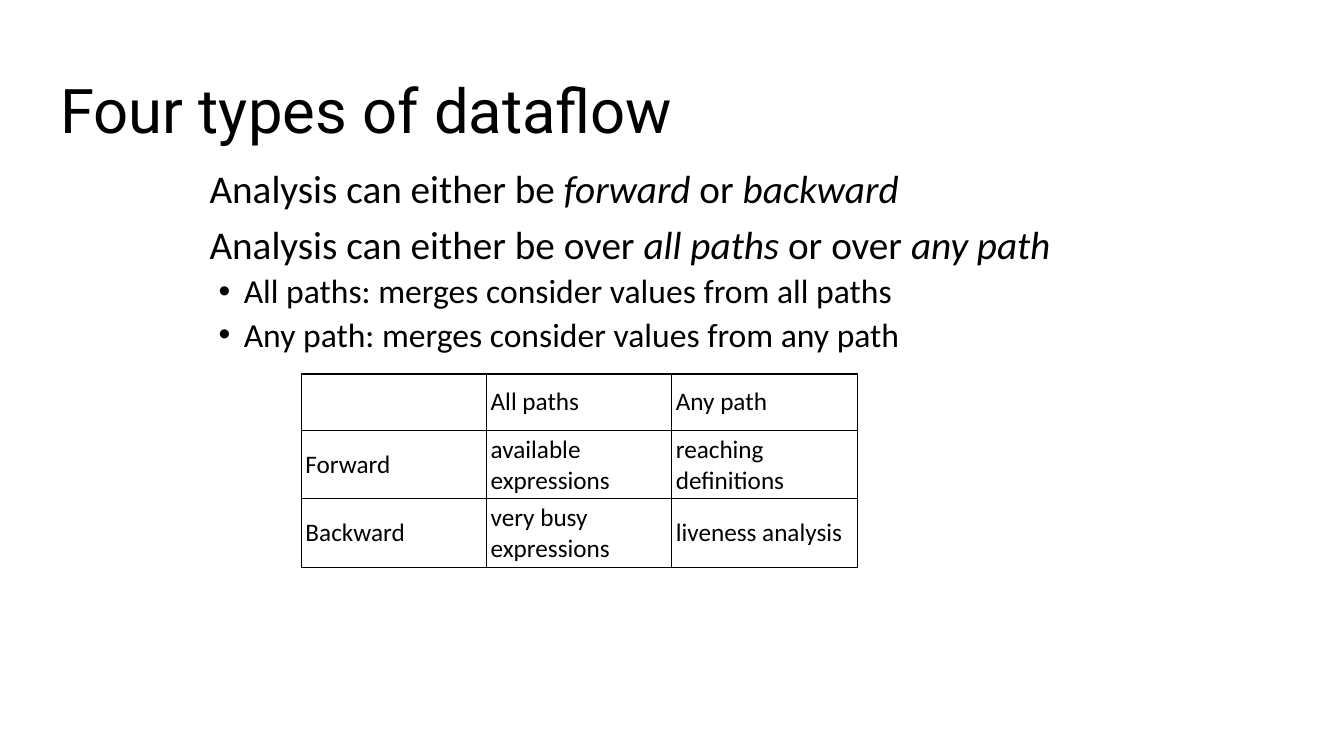
from lxml.etree import SubElement
from pptx import Presentation
from pptx.dml.color import RGBColor
from pptx.enum.text import MSO_ANCHOR
from pptx.oxml.ns import qn
from pptx.util import Inches, Pt

BLACK = RGBColor(0, 0, 0)
BODY = {"name": "Calibri", "size": Pt(28)}
SUB = {"name": "Calibri", "size": Pt(24)}
CELL = {"name": "Calibri", "size": Pt(18)}
TITLE = {"name": "Roboto", "size": Pt(44)}

POINTS = [
    (0, [("Analysis can either be ", False), ("forward", True),
         (" or ", False), ("backward", True)]),
    (0, [("Analysis can either be over ", False), ("all paths", True),
         (" or over ", False), ("any path", True)]),
    (1, [("All paths: merges consider values from all paths", False)]),
    (1, [("Any path: merges consider values from any path", False)]),
]
LEVELS = [
    {"style": BODY, "left": 1.02, "hang": 0, "before": 10},
    {"style": SUB, "left": 1.36, "hang": 0.25, "before": 5},
]
ANALYSES = [
    ["", "All paths", "Any path"],
    ["Forward", "available expressions", "reaching definitions"],
    ["Backward", "very busy expressions", "liveness analysis"],
]
ROW_HEIGHTS = [0.56, 0.66, 0.66]


def add_run(p, text, style, italic=False):
    r = p.add_run()
    r.text = text
    for name, value in {**style, "italic": italic}.items():
        setattr(r.font, name, value)
    r.font.color.rgb = BLACK


def add_text_frame(s, box, anchor):
    tf = s.shapes.add_textbox(*map(Inches, box)).text_frame
    tf.word_wrap = True
    tf.vertical_anchor = anchor
    return tf


def add_title(s, box, text):
    p = add_text_frame(s, box, MSO_ANCHOR.MIDDLE).paragraphs[0]
    p.line_spacing = 0.9
    add_run(p, text, TITLE)


def add_points(s, box, points):
    tf = add_text_frame(s, box, MSO_ANCHOR.TOP)
    for i, (level, runs) in enumerate(points):
        p = tf.add_paragraph() if i else tf.paragraphs[0]
        fmt = LEVELS[level]
        p.level = level
        p.line_spacing = 0.9
        p.space_before = Pt(fmt["before"])
        pPr = p._p.get_or_add_pPr()
        pPr.set("marL", str(Inches(fmt["left"])))
        pPr.set("indent", str(-Inches(fmt["hang"])))
        if fmt["hang"]:
            SubElement(pPr, qn("a:buFont"), typeface="Arial")
            SubElement(pPr, qn("a:buChar"), char="•")
        for text, italic in runs:
            add_run(p, text, fmt["style"], italic)


def add_borders(cell, widths):
    tcPr = cell._tc.get_or_add_tcPr()
    for side, width in widths.items():
        ln = SubElement(tcPr, qn(f"a:ln{side}"), w=str(Pt(width)))
        fill = SubElement(ln, qn("a:solidFill"))
        SubElement(fill, qn("a:srgbClr"), val=str(BLACK))


def add_analyses(s, box, rows):
    table = s.shapes.add_table(len(rows), len(rows[0]), *map(Inches, box)).table
    table.first_row = table.horz_banding = False
    for row, height in zip(table.rows, ROW_HEIGHTS):
        row.height = Inches(height)
    for i, row in enumerate(rows):
        for j, text in enumerate(row):
            cell = table.cell(i, j)
            add_borders(cell, {"L": 0.75 if j else 1.25, "R": 0.75,
                               "T": 0.75 if i else 1.25, "B": 0.75})
            cell.fill.background()
            cell.vertical_anchor = MSO_ANCHOR.MIDDLE
            for side in ("left", "right", "top", "bottom"):
                setattr(cell, f"margin_{side}", Inches(0.04))
            if text:
                add_run(cell.text_frame.paragraphs[0], text, CELL)


def main():
    prs = Presentation()
    prs.slide_width, prs.slide_height = Inches(13.33), Inches(7.5)
    s = prs.slides.add_slide(prs.slide_layouts[6])
    add_title(s, (0.5, 0.4, 11.5, 1.45), "Four types of dataflow")
    add_points(s, (0.96, 1.63, 10.35, 5.7), POINTS)
    add_analyses(s, (2.99, 3.71, 5.51, 1.88), ANALYSES)
    prs.save("out.pptx")


if __name__ == "__main__":
    main()
